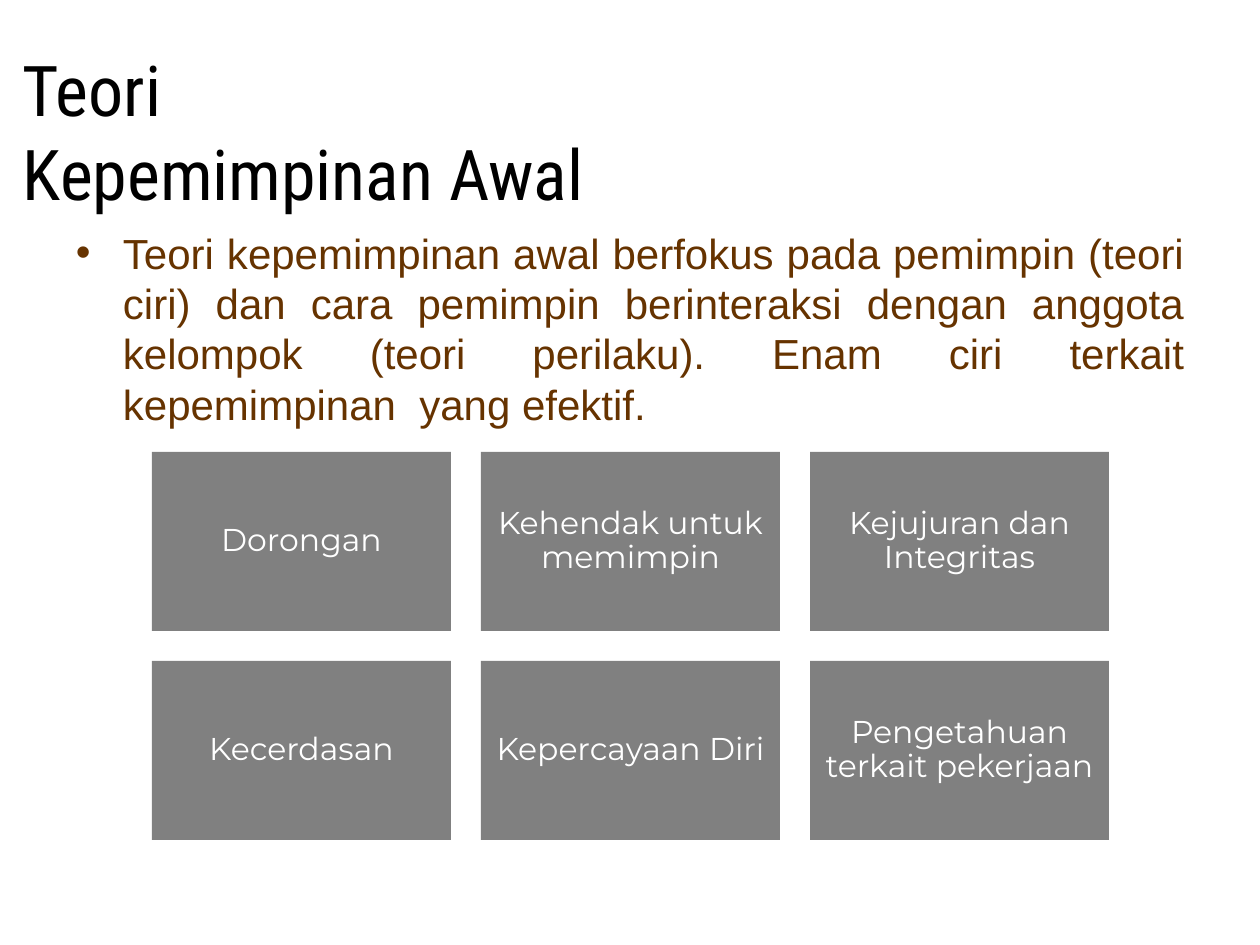
from dataclasses import dataclass

import pptx
import pptx.dml.color
import pptx.enum.shapes
import pptx.enum.text
import pptx.util
from lxml import etree
from pptx.oxml.ns import qn

EMU_PER_PX = 914400 / 126
COLORS = {"title": "000000", "body": "663300", "card": "808080", "card_text": "FFFFFF"}
ALIGN = pptx.enum.text.PP_ALIGN
ANCHOR = pptx.enum.text.MSO_ANCHOR


@dataclass(frozen=True)
class Area:
    left: int
    top: int
    width: int
    height: int


@dataclass(frozen=True)
class TextStyle:
    font: str
    size: int
    color: str
    align: ALIGN
    anchor: ANCHOR
    side_inset: int
    edge_inset: int
    line_spacing: float = 1.0


TITLE_STYLE = TextStyle("Roboto Condensed", 40, "title", ALIGN.LEFT, ANCHOR.MIDDLE, 13, 6)
BODY_STYLE = TextStyle("Arial", 24, "body", ALIGN.JUSTIFY, ANCHOR.TOP, 13, 6)
CARD_STYLE = TextStyle("Montserrat", 18, "card_text", ALIGN.CENTER, ANCHOR.MIDDLE, 9, 9, 0.9)

TITLE = "Teori\vKepemimpinan Awal"
BODY = (
    "Teori kepemimpinan awal berfokus pada pemimpin (teori ciri) dan cara "
    "pemimpin berinteraksi dengan anggota kelompok (teori perilaku). "
    "Enam ciri terkait kepemimpinan  yang efektif."
)
TRAITS = [
    "Dorongan",
    "Kehendak untuk memimpin",
    "Kejujuran dan Integritas",
    "Kecerdasan",
    "Kepercayaan Diri",
    "Pengetahuan terkait pekerjaan",
]
FIRST_CARD = Area(152, 452, 299, 179)
CARD_GAP = 30
COLUMNS = 3


def px(length: int) -> pptx.util.Emu:
    return pptx.util.Emu(round(length * EMU_PER_PX))


def rgb(name: str) -> pptx.dml.color.RGBColor:
    return pptx.dml.color.RGBColor.from_string(COLORS[name])


def bounds(area: Area) -> list[pptx.util.Emu]:
    return [px(value) for value in (area.left, area.top, area.width, area.height)]


def set_attributes(target, values: dict) -> None:
    for name, value in values.items():
        setattr(target, name, value)


def add_bullet(para, indent: int) -> None:
    properties = para._p.get_or_add_pPr()
    properties.set("marL", str(px(indent)))
    properties.set("indent", str(px(-indent)))
    etree.SubElement(properties, qn("a:buFont"), typeface="Arial")
    etree.SubElement(properties, qn("a:buChar"), char="•")


def write_text(shape, text: str, style: TextStyle, bullet_indent: int = 0) -> None:
    frame = shape.text_frame
    set_attributes(frame, {
        "word_wrap": True,
        "auto_size": pptx.enum.text.MSO_AUTO_SIZE.NONE,
        "vertical_anchor": style.anchor,
        "margin_left": px(style.side_inset),
        "margin_right": px(style.side_inset),
        "margin_top": px(style.edge_inset),
        "margin_bottom": px(style.edge_inset),
    })
    para = frame.paragraphs[0]
    para.text = text
    if bullet_indent:
        add_bullet(para, bullet_indent)
    set_attributes(para, {"alignment": style.align, "line_spacing": style.line_spacing})
    for span in para.runs:
        set_attributes(span.font, {"name": style.font, "size": pptx.util.Pt(style.size)})
        span.font.color.rgb = rgb(style.color)


def add_text_box(page, area: Area, text: str, style: TextStyle, bullet_indent: int = 0) -> None:
    box = page.shapes.add_textbox(*bounds(area))
    write_text(box, text, style, bullet_indent)


def add_card(page, area: Area, text: str) -> None:
    card = page.shapes.add_shape(pptx.enum.shapes.MSO_SHAPE.RECTANGLE, *bounds(area))
    card.shadow.inherit = False
    card.fill.solid()
    card.fill.fore_color.rgb = rgb("card")
    card.line.fill.background()
    write_text(card, text, CARD_STYLE)


def add_trait_grid(page) -> None:
    for index, trait in enumerate(TRAITS):
        row, column = divmod(index, COLUMNS)
        area = Area(
            FIRST_CARD.left + column * (FIRST_CARD.width + CARD_GAP),
            FIRST_CARD.top + row * (FIRST_CARD.height + CARD_GAP),
            FIRST_CARD.width,
            FIRST_CARD.height,
        )
        add_card(page, area, trait)


def main() -> None:
    deck = pptx.Presentation()
    set_attributes(deck, {"slide_width": px(1260), "slide_height": px(945)})
    page = deck.slides.add_slide(deck.slide_layouts[6])
    add_text_box(page, Area(10, 63, 872, 136), TITLE, TITLE_STYLE)
    add_text_box(page, Area(63, 221, 1134, 221), BODY, BODY_STYLE, bullet_indent=47)
    add_trait_grid(page)
    deck.save("out.pptx")


if __name__ == "__main__":
    main()
